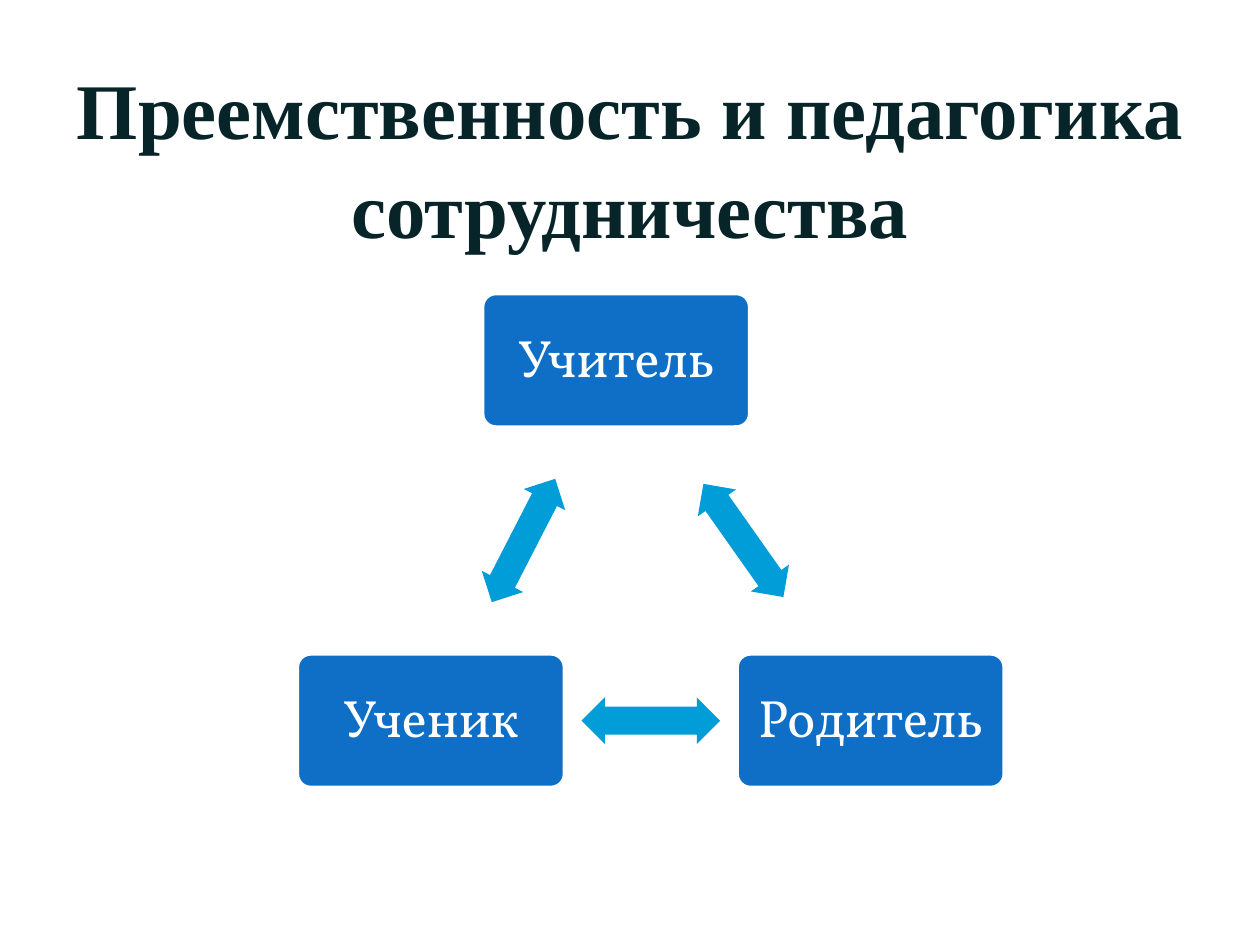
from math import atan2, degrees

from pptx import Presentation
from pptx.dml.color import RGBColor
from pptx.enum.shapes import MSO_SHAPE
from pptx.enum.text import MSO_ANCHOR, MSO_AUTO_SIZE, PP_ALIGN
from pptx.util import Inches, Pt

COLORS = {"title": "072428", "box": "0F6FC6", "arrow": "009DD9", "white": "FFFFFF"}

# Centres of the three roles, clockwise from the top
ROLES = [("Учитель", 4.89, 2.86), ("Родитель", 6.91, 5.72), ("Ученик", 3.42, 5.72)]
BOX_SIZE = (2.12, 1.06)
ARROW_SIZE = (1.1, 0.37)


def add_centred(kind, center_x, center_y, size, fill):
    """Add a filled preset shape around a centre given in inches."""
    width, height = size
    shape = slide.shapes.add_shape(
        kind, Inches(center_x - width / 2), Inches(center_y - height / 2),
        Inches(width), Inches(height))
    shape.shadow.inherit = False
    shape.fill.solid()
    shape.fill.fore_color.rgb = RGBColor.from_string(COLORS[fill])
    return shape


def format_paragraph(paragraph, font_name, size, color, bold):
    paragraph.alignment = PP_ALIGN.CENTER
    paragraph.font.name = font_name
    paragraph.font.size = Pt(size)
    paragraph.font.bold = bold
    paragraph.font.color.rgb = RGBColor.from_string(COLORS[color])


presentation = Presentation()
presentation.slide_width = Inches(10)
presentation.slide_height = Inches(7.5)
slide = presentation.slides.add_slide(presentation.slide_layouts[5])

# Title
title = slide.shapes.title
title.left, title.top = Inches(0.5), Inches(0.77)
title.width, title.height = Inches(9), Inches(1.25)
frame = title.text_frame
frame.text = "Преемственность и педагогика сотрудничества"
frame.word_wrap = True
frame.auto_size = MSO_AUTO_SIZE.NONE
frame.vertical_anchor = MSO_ANCHOR.BOTTOM
frame.margin_left = frame.margin_right = frame.margin_bottom = 0
frame.margin_top = Inches(0.05)
paragraph = frame.paragraphs[0]
paragraph.line_spacing = 1.05
format_paragraph(paragraph, "Times New Roman", 45, "title", True)

# Each role, followed by the arrow to the next one
for index, (name, x, y) in enumerate(ROLES):
    box = add_centred(MSO_SHAPE.ROUNDED_RECTANGLE, x, y, BOX_SIZE, "box")
    box.adjustments[0] = 0.1
    box.line.color.rgb = RGBColor.from_string(COLORS["white"])
    box.line.width = Pt(2)
    frame = box.text_frame
    frame.text = name
    frame.word_wrap = True
    frame.vertical_anchor = MSO_ANCHOR.MIDDLE
    frame.margin_left = frame.margin_right = Inches(0.12)
    frame.margin_top = frame.margin_bottom = Inches(0.12)
    paragraph = frame.paragraphs[0]
    paragraph.line_spacing = 0.9
    format_paragraph(paragraph, "Vollkorn", 30, "white", False)

    _, next_x, next_y = ROLES[(index + 1) % len(ROLES)]
    arrow = add_centred(MSO_SHAPE.LEFT_RIGHT_ARROW, (x + next_x) / 2,
                        (y + next_y) / 2, ARROW_SIZE, "arrow")
    arrow.adjustments[0] = 0.6
    arrow.adjustments[1] = 0.5
    arrow.line.fill.background()
    arrow.rotation = degrees(atan2(next_y - y, next_x - x)) % 360

presentation.save("out.pptx")
